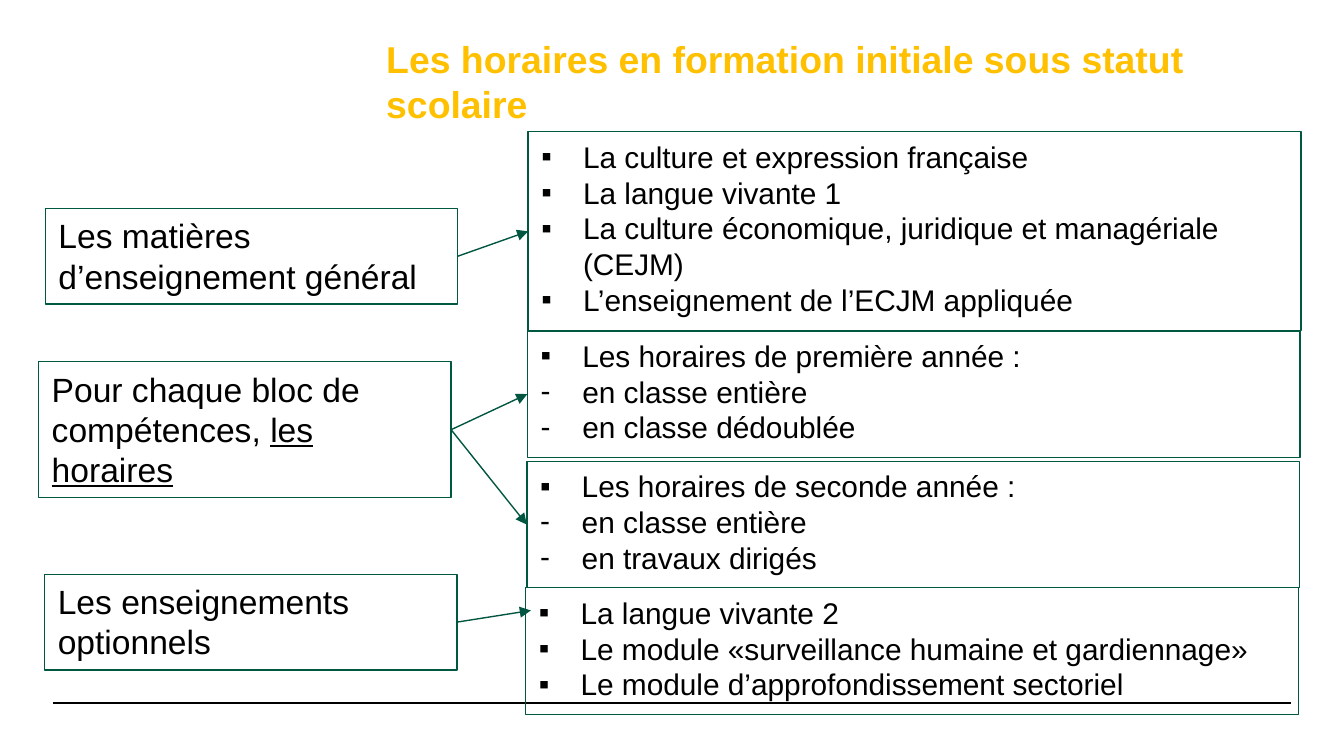
from dataclasses import dataclass

from lxml.etree import SubElement
from pptx import Presentation
from pptx.dml.color import RGBColor
from pptx.enum.shapes import MSO_CONNECTOR, MSO_SHAPE
from pptx.enum.text import MSO_ANCHOR, MSO_AUTO_SIZE, PP_ALIGN
from pptx.oxml.ns import qn
from pptx.util import Inches, Pt


@dataclass(frozen=True)
class Theme:
    """Colours, font and type sizes of the slide."""
    font: str = "Arial"
    gold: RGBColor = RGBColor(0xFF, 0xC0, 0x00)
    ink: RGBColor = RGBColor(0, 0, 0)
    border: RGBColor = RGBColor(0x00, 0x58, 0x41)
    arrow: RGBColor = RGBColor(0x00, 0x56, 0x40)
    title_size: int = 20
    topic_size: int = 18
    detail_size: int = 16
    stroke: float = 0.75
    rule_stroke: float = 0.8


THEME = Theme()
WIDTH = Inches(10)
HEIGHT = WIDTH * 9 // 16
INDENT = Inches(0.31)
TOPIC_WIDTH, DETAIL_WIDTH = 30.7, 57.5
TWO_LINES, THREE_LINES, THREE_ITEMS, FIVE_LINES = 12.63, 17.97, 16.73, 26.33
SQUARE, DASH = "▪", "-"


def place(left, top, width, height):
    """Turn percentages of the slide into lengths."""
    return [round(share * full / 100) for share, full in
            ((left, WIDTH), (top, HEIGHT), (width, WIDTH), (height, HEIGHT))]


def add_run(paragraph, text, size, colour, bold=None, underline=None):
    """Append one styled run to a paragraph."""
    run = paragraph.add_run()
    run.text = text
    run.font.name, run.font.size = THEME.font, Pt(size)
    run.font.color.rgb = colour
    run.font.bold, run.font.underline = bold, underline


def add_title(slide, box, text):
    """Write the slide title without margins."""
    frame = slide.shapes.add_textbox(*place(*box)).text_frame
    frame.word_wrap = True
    frame.margin_left = frame.margin_top = frame.margin_right = frame.margin_bottom = 0
    add_run(frame.paragraphs[0], text, THEME.title_size, THEME.gold, bold=True)


def add_frame(slide, box):
    """Draw an unfilled bordered box ready for text."""
    frame = slide.shapes.add_shape(MSO_SHAPE.RECTANGLE, *place(*box))
    frame.shadow.inherit = False
    frame.fill.background()
    frame.line.color.rgb, frame.line.width = THEME.border, Pt(THEME.stroke)
    text = frame.text_frame
    text.word_wrap = True
    text.vertical_anchor = MSO_ANCHOR.TOP
    text.auto_size = MSO_AUTO_SIZE.SHAPE_TO_FIT_TEXT
    return frame


def add_topic(slide, box, text, underlined=None):
    """Add a topic box, optionally ending in underlined words."""
    topic = add_frame(slide, box)
    paragraph = topic.text_frame.paragraphs[0]
    paragraph.alignment = PP_ALIGN.LEFT
    add_run(paragraph, text, THEME.topic_size, THEME.ink)
    if underlined:
        add_run(paragraph, underlined, THEME.topic_size, THEME.ink, underline=True)
    return topic


def add_details(slide, box, items):
    """Add a box listing (bullet, text) items."""
    details = add_frame(slide, box)
    text = details.text_frame
    for index, (bullet, item) in enumerate(items):
        paragraph = text.add_paragraph() if index else text.paragraphs[0]
        paragraph.alignment = PP_ALIGN.LEFT
        properties = paragraph._p.get_or_add_pPr()
        properties.set("marL", str(INDENT))
        properties.set("indent", str(-INDENT))
        SubElement(properties, qn("a:buFont"), typeface=THEME.font)
        SubElement(properties, qn("a:buChar"), char=bullet)
        add_run(paragraph, item, THEME.detail_size, THEME.ink)
    return details


def add_line(slide, box, colour, stroke):
    """Draw a straight line across a box."""
    left, top, width, height = place(*box)
    line = slide.shapes.add_connector(
        MSO_CONNECTOR.STRAIGHT, left, top, left + width, top + height)
    line.line.color.rgb, line.line.width = colour, Pt(stroke)
    SubElement(line._element.spPr, qn("a:effectLst"))
    return line


def add_arrow(slide, topic, box, details=None):
    """Point from a topic to its details, or to the corner of the box."""
    arrow = add_line(slide, box, THEME.arrow, THEME.stroke)
    SubElement(arrow.line._get_or_add_ln(), qn("a:tailEnd"), type="triangle")
    arrow.begin_connect(topic, 3)
    if details:
        arrow.end_connect(details, 1)


def main():
    """Build the timetable slide."""
    deck = Presentation()
    deck.slide_width, deck.slide_height = WIDTH, HEIGHT
    slide = deck.slides.add_slide(deck.slide_layouts[6])

    add_line(slide, (3.94, 93.02, 92.12, 0), THEME.ink, THEME.rule_stroke)
    add_title(slide, (28.74, 4.8, 69.3, 10.5),
              "Les horaires en formation initiale sous statut scolaire")

    general = add_topic(slide, (3.37, 27.58, TOPIC_WIDTH, TWO_LINES),
                        "Les matières d’enseignement général")
    subjects = add_details(slide, (39.3, 17.44, DETAIL_WIDTH, FIVE_LINES), [
        (SQUARE, "La culture et expression française"),
        (SQUARE, "La langue vivante 1"),
        (SQUARE, "La culture économique, juridique et managériale (CEJM)"),
        (SQUARE, "L’enseignement de l’ECJM appliquée")])
    skills = add_topic(slide, (2.87, 47.86, TOPIC_WIDTH, THREE_LINES),
                       "Pour chaque bloc de compétences, ", "les horaires")
    first_year, second_year = (
        add_details(slide, (left, top, DETAIL_WIDTH, THREE_ITEMS), [
            (SQUARE, f"Les horaires de {year} année :"),
            (DASH, "en classe entière"),
            (DASH, grouping)])
        for left, top, year, grouping in (
            (39.24, 43.77, "première", "en classe dédoublée"),
            (39.2, 61.03, "seconde", "en travaux dirigés")))
    optional = add_topic(slide, (3.32, 75.98, TOPIC_WIDTH, TWO_LINES),
                         "Les enseignements optionnels")
    add_details(slide, (39.12, 77.76, DETAIL_WIDTH, THREE_ITEMS), [
        (SQUARE, "La langue vivante 2"),
        (SQUARE, "Le module «surveillance humaine et gardiennage»"),
        (SQUARE, "Le module d’approfondissement sectoriel")])

    add_arrow(slide, general, (34.1, 33.9, 5.2, -3.3), subjects)
    add_arrow(slide, skills, (33.6, 56.9, 5.6, -4.8), first_year)
    add_arrow(slide, skills, (33.6, 56.9, 5.6, 12.5), second_year)
    add_arrow(slide, optional, (34, 82.2, 5.5, -1.45))
    deck.save("out.pptx")


if __name__ == "__main__":
    main()
